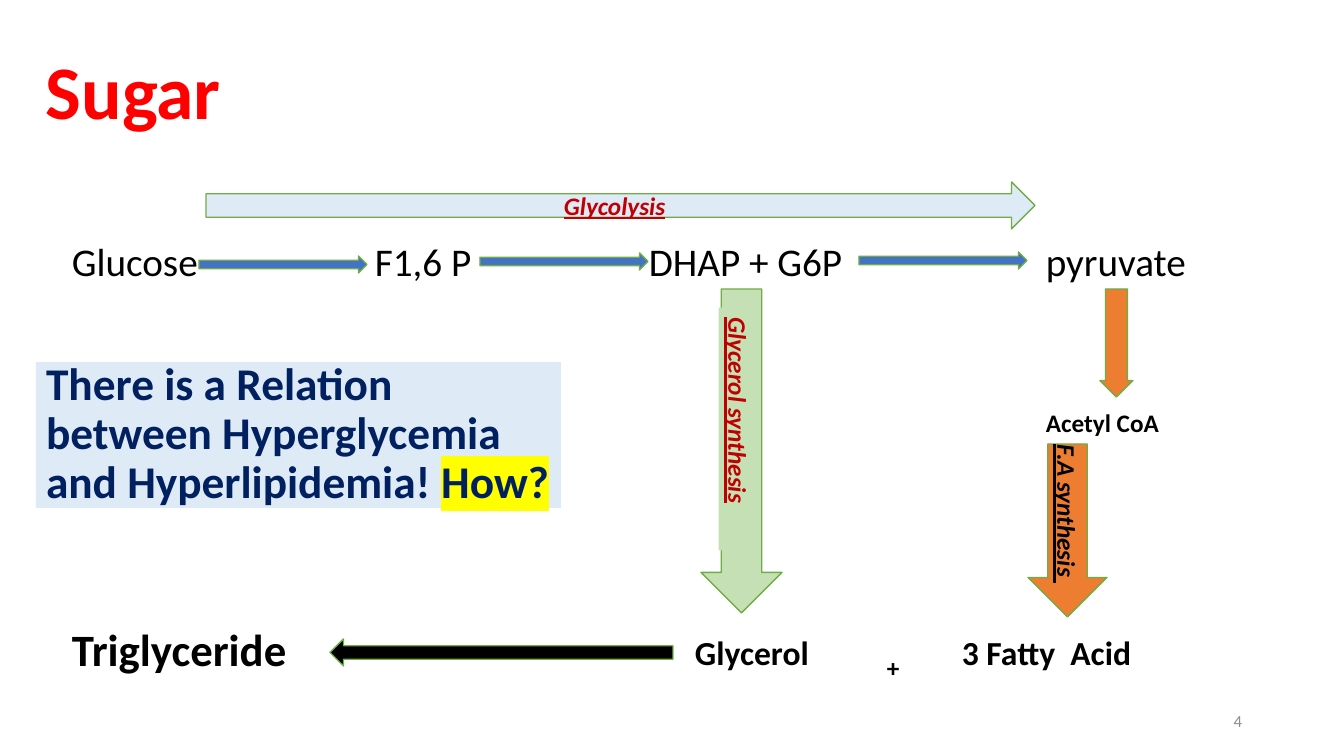
from dataclasses import dataclass

from lxml import etree
from pptx import Presentation
from pptx.dml.color import RGBColor
from pptx.enum.shapes import MSO_SHAPE
from pptx.enum.text import MSO_ANCHOR, PP_ALIGN
from pptx.oxml.ns import qn
from pptx.util import Pt

PX = 914400 / 100.8
TITLE_ONLY = 5
RECT = MSO_SHAPE.RECTANGLE
RIGHT, LEFT, DOWN = MSO_SHAPE.RIGHT_ARROW, MSO_SHAPE.LEFT_ARROW, MSO_SHAPE.DOWN_ARROW
TOP, MIDDLE = MSO_ANCHOR.TOP, MSO_ANCHOR.MIDDLE
START, CENTER, END = PP_ALIGN.LEFT, PP_ALIGN.CENTER, PP_ALIGN.RIGHT


@dataclass(frozen=True)
class Theme:
    font: str = "Calibri"
    black: str = "000000"
    red: str = "FF0000"
    crimson: str = "C00000"
    navy: str = "002060"
    gray: str = "8C8C8C"
    pale: str = "DEEBF7"
    blue: str = "4472C4"
    orange: str = "ED7D31"
    mint: str = "C5E0B4"
    edge: str = "70AD47"
    yellow: str = "FFFF00"
    head: float = 54
    claim: float = 32.4
    fat: float = 32
    step: float = 28
    piece: float = 24
    note: float = 18
    page: float = 12


T = Theme()

CLAIM = ("There is a Relation between Hyperglycemia and Hyperlipidemia! ", "How?")
CLAIM_BOX = (36, 362, 525, 146)

# kind, box, fill, shaft share of the width
ARROWS = [
    (RIGHT, (199, 256, 168, 17), T.blue, 0.5),
    (RIGHT, (480, 253, 168, 17), T.blue, 0.5),
    (RIGHT, (859, 252, 168, 17), T.blue, 0.5),
    (LEFT, (330, 639, 343, 27), T.black, 0.5),
    (DOWN, (701, 289, 81, 324), T.mint, 0.5),
    (DOWN, (1028, 444, 79, 173), T.orange, 0.5),
    (DOWN, (1100, 289, 33, 108), T.orange, 0.66),
]
FLOW = ("Glycolysis", (206, 182, 829, 47), T.pale)

STEP_TOP, STEP_HIGH = 232, 57
STEPS = [("Glucose", 62, 150), ("F1,6 P", 365, 130),
         ("DHAP + G6P", 639, 230), ("pyruvate", 1036, 180)]

# text, box, size, colour, bold
LABELS = [
    ("Sugar", (36, 39, 238, 102), T.head, T.red, True),
    ("Triglyceride", (62, 617, 280, 64), T.fat, T.black, True),
    ("Glycerol", (685, 627, 150, 51), T.piece, T.black, True),
    ("+", (877, 647, 40, 41), T.note, T.black, True),
    ("3 Fatty  Acid", (952, 627, 230, 51), T.piece, T.black, True),
    ("Acetyl CoA", (1036, 402, 160, 41), T.note, T.black, True),
]
LABELS += [(text, (x, STEP_TOP, wide, STEP_HIGH), T.step, T.black, False)
           for text, x, wide in STEPS]

# text, box before the quarter turn, colour, fill
TURNED = [
    ("Glycerol synthesis", (617, 409, 243, 40), T.crimson, T.mint),
    ("F.A synthesis ", (984, 498, 167, 40), T.black, None),
]
PAGE = ("4", (950, 701, 302, 40))


def emu(box):
    return [round(v * PX) for v in box]


def rgb(code):
    return RGBColor.from_string(code)


def write(shape, text, size, color, bold=False, slant=False, align=START, anchor=TOP):
    """Add one run; slant means italic and underlined."""
    frame = shape.text_frame
    frame.word_wrap = True
    frame.vertical_anchor = anchor
    para = frame.paragraphs[0]
    para.alignment = align
    run = para.add_run()
    run.text = text
    font = run.font
    font.name, font.size, font.bold = T.font, Pt(size), bold
    font.italic = font.underline = slant
    font.color.rgb = rgb(color)
    return run


def mark(run, color):
    """Highlight a run."""
    glow = etree.Element(qn("a:highlight"))
    etree.SubElement(glow, qn("a:srgbClr")).set("val", color)
    run.font._element.find(qn("a:solidFill")).addnext(glow)


def draw(slide, kind, box, fill, edge=T.edge):
    shape = slide.shapes.add_shape(kind, *emu(box))
    shape.shadow.inherit = False
    shape.fill.solid()
    shape.fill.fore_color.rgb = rgb(fill)
    if edge:
        shape.line.color.rgb = rgb(edge)
        shape.line.width = Pt(1)
    else:
        shape.line.fill.background()
    return shape


def label(slide, box, *args, **style):
    write(slide.shapes.add_textbox(*emu(box)), *args, **style)


def claim(slide):
    title = slide.shapes.title
    title.left, title.top, title.width, title.height = emu(CLAIM_BOX)
    title.fill.solid()
    title.fill.fore_color.rgb = rgb(T.pale)
    runs = [write(title, text, T.claim, T.navy, True, anchor=MIDDLE) for text in CLAIM]
    title.text_frame.paragraphs[0].line_spacing = 0.9
    mark(runs[-1], T.yellow)


def main():
    deck = Presentation()
    deck.slide_width, deck.slide_height = emu((1344, 756))
    slide = deck.slides.add_slide(deck.slide_layouts[TITLE_ONLY])
    claim(slide)
    for kind, box, fill, shaft in ARROWS:
        draw(slide, kind, box, fill).adjustments[0] = shaft
    text, box, fill = FLOW
    write(draw(slide, RIGHT, box, fill), text, T.note, T.crimson, True, True,
          CENTER, MIDDLE)
    for text, box, size, color, bold in LABELS:
        label(slide, box, text, size, color, bold)
    for text, box, color, fill in TURNED:
        if fill:
            shape = draw(slide, RECT, box, fill, None)
        else:
            shape = slide.shapes.add_textbox(*emu(box))
        shape.rotation = 90
        write(shape, text, T.note, color, True, True)
    text, box = PAGE
    label(slide, box, text, T.page, T.gray, align=END, anchor=MIDDLE)
    deck.save("out.pptx")


if __name__ == "__main__":
    main()
